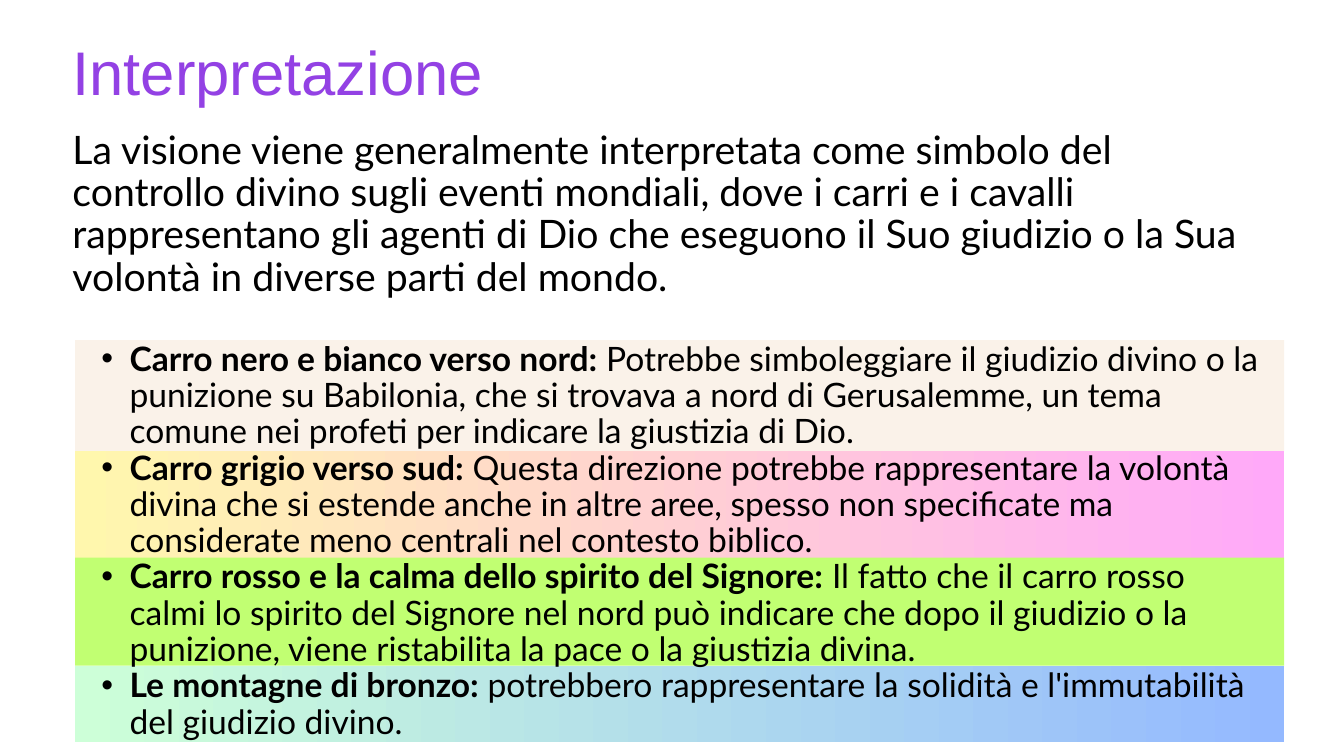
from dataclasses import dataclass

import pptx
import pptx.dml.color
import pptx.enum.shapes
import pptx.enum.text
import pptx.util
from lxml import etree
from pptx.oxml.ns import qn
from pptx.util import Cm, Pt

INTRO = (
    "La visione viene generalmente interpretata come simbolo del controllo "
    "divino sugli eventi mondiali, dove i carri e i cavalli rappresentano gli "
    "agenti di Dio che eseguono il Suo giudizio o la Sua volontà in diverse "
    "parti del mondo."
)


@dataclass
class Point:
    head: str
    body: str
    height: float  # cm
    fills: tuple[str, ...]  # one colour, or the two ends of a gradient


POINTS = [
    Point(
        "Carro nero e bianco verso nord:",
        " Potrebbe simboleggiare il giudizio divino o la punizione su Babilonia, "
        "che si trovava a nord di Gerusalemme, un tema comune nei profeti per "
        "indicare la giustizia di Dio.",
        4.18, ("FAF2E9",),
    ),
    Point(
        "Carro grigio verso sud:",
        " Questa direzione potrebbe rappresentare la volontà divina che si "
        "estende anche in altre aree, spesso non specificate ma considerate "
        "meno centrali nel contesto biblico.",
        4.04, ("FFF7AD", "FFA9F9"),
    ),
    Point(
        "Carro rosso e la calma dello spirito del Signore:",
        " Il fatto che il carro rosso calmi lo spirito del Signore nel nord può "
        "indicare che dopo il giudizio o la punizione, viene ristabilita la pace "
        "o la giustizia divina.",
        4.08, ("C1FF72",),
    ),
    Point(
        "Le montagne di bronzo:",
        " potrebbero rappresentare la solidità e l'immutabilità del giudizio "
        "divino.",
        2.9, ("CDFFD8", "94B9FF"),
    ),
]


def rgb(code: str) -> pptx.dml.color.RGBColor:
    return pptx.dml.color.RGBColor.from_string(code)


def set_frame(frame, anchor) -> None:
    frame.margin_left = frame.margin_right = 0
    frame.margin_top = frame.margin_bottom = 0
    frame.word_wrap = True
    frame.auto_size = pptx.enum.text.MSO_AUTO_SIZE.NONE
    frame.vertical_anchor = anchor


def set_style(para, face: str, size: float, color: str, lead: float) -> None:
    para.alignment = pptx.enum.text.PP_ALIGN.LEFT
    para.line_spacing = Pt(lead)
    para.font.name = face
    para.font.size = Pt(size)
    para.font.color.rgb = rgb(color)


def add_band(slide, top: float, point: Point) -> None:
    band = slide.shapes.add_shape(
        pptx.enum.shapes.MSO_SHAPE.RECTANGLE,
        Cm(2.84), Cm(top), Cm(45.7), Cm(point.height),
    )
    band.shadow.inherit = False
    band.line.fill.background()
    if len(point.fills) == 1:
        band.fill.solid()
        band.fill.fore_color.rgb = rgb(point.fills[0])
    else:
        band.fill.gradient()
        band.fill.gradient_angle = 0
        for stop, color in zip(band.fill.gradient_stops, point.fills):
            stop.color.rgb = rgb(color)


def add_point(frame, point: Point):
    para = frame.add_paragraph()
    para.level = 1
    props = para._p.get_or_add_pPr()
    props.set("marL", str(Cm(2.16)))
    props.set("indent", str(-Cm(1.07)))
    etree.SubElement(props, qn("a:buFont"), typeface="Arial")
    etree.SubElement(props, qn("a:buChar"), char="•")
    for text, bold in ((point.head, True), (point.body, False)):
        run = para.add_run()
        run.text = text
        run.font.bold = bold
    set_style(para, "Lato", 36, "000000", 38.9)
    return para


def main() -> None:
    deck = pptx.Presentation()
    deck.slide_width, deck.slide_height = Cm(50.8), Cm(28.575)
    slide = deck.slides.add_slide(deck.slide_layouts[5])

    title = slide.shapes.title
    title.left, title.top = Cm(2.74), Cm(0.97)
    title.width, title.height = Cm(43.82), Cm(3.68)
    title.text_frame.text = "Interpretazione"
    set_frame(title.text_frame, pptx.enum.text.MSO_ANCHOR.MIDDLE)
    set_style(title.text_frame.paragraphs[0], "Arial", 66, "9341E4", 71.3)

    top = 12.86
    for point in POINTS:
        add_band(slide, top, point)
        top += point.height

    box = slide.shapes.add_textbox(Cm(2.74), Cm(4.9), Cm(45.19), Cm(23.16))
    frame = box.text_frame
    set_frame(frame, pptx.enum.text.MSO_ANCHOR.TOP)
    frame.text = INTRO
    set_style(frame.paragraphs[0], "Lato", 42, "000000", 45.4)
    paras = [add_point(frame, point) for point in POINTS]
    paras[0].space_before = Pt(45.4)

    deck.save("out.pptx")


if __name__ == "__main__":
    main()
